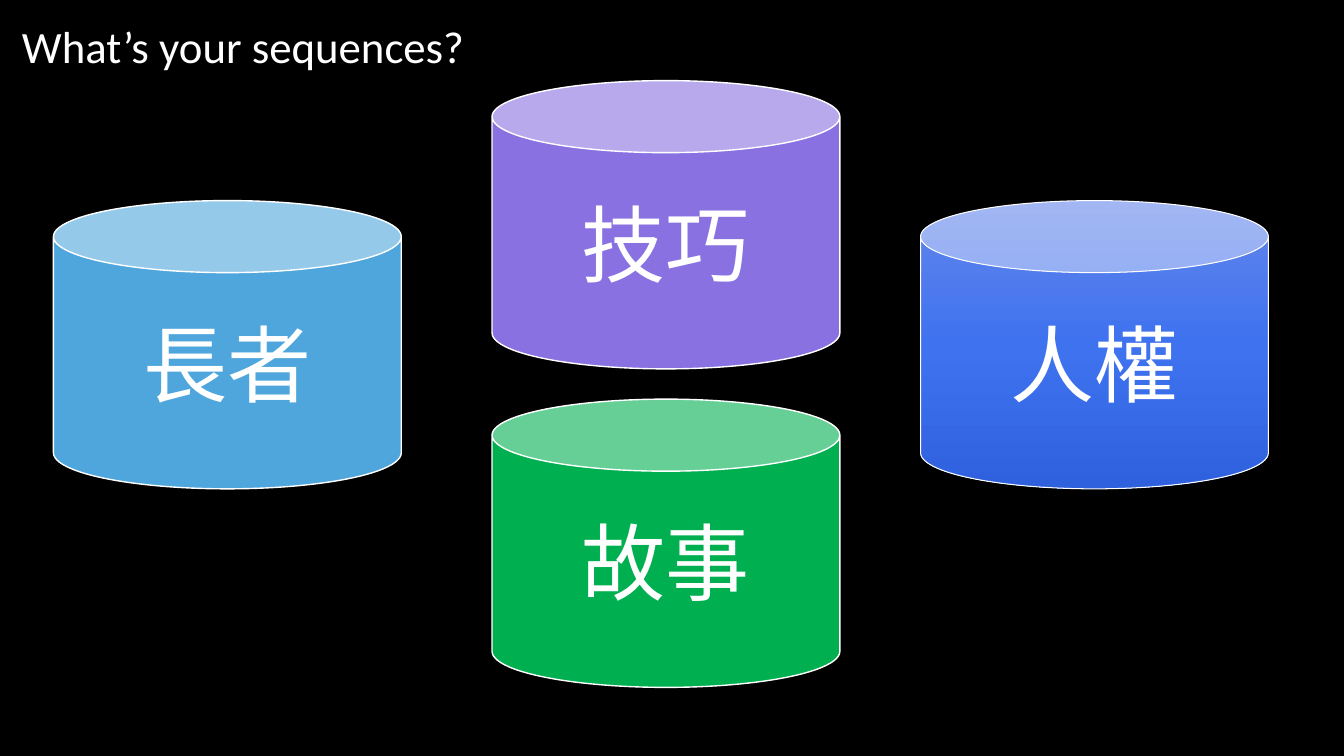
from copy import deepcopy
from dataclasses import dataclass

from pptx import Presentation
from pptx.dml.color import RGBColor
from pptx.enum.shapes import MSO_SHAPE
from pptx.enum.text import MSO_ANCHOR, MSO_AUTO_SIZE, PP_ALIGN
from pptx.oxml.ns import qn
from pptx.shapes.autoshape import Shape
from pptx.slide import Slide
from pptx.util import Inches, Pt

CAN = MSO_SHAPE.CAN
MIDDLE = MSO_ANCHOR.MIDDLE
FIT_SHAPE = MSO_AUTO_SIZE.SHAPE_TO_FIT_TEXT
LEFT, CENTER = PP_ALIGN.LEFT, PP_ALIGN.CENTER

FONT = "Calibri"
BLACK, WHITE = "000000", "FFFFFF"
CAN_WIDTH, CAN_HEIGHT = 3.45, 2.86
CENTER_COLUMN, SIDE_ROW = 4.88, 1.99


@dataclass(frozen=True)
class Cylinder:
    label: str
    left: float
    top: float
    colors: tuple[str, ...]  # one colour is solid, three run from top to bottom
    line_width: float = 1


CYLINDERS = [
    Cylinder("技巧", CENTER_COLUMN, 0.8, ("8971E1",)),
    Cylinder("長者", 0.53, SIDE_ROW, ("4EA6DC",)),
    Cylinder("故事", CENTER_COLUMN, 3.96, ("00B050",)),
    Cylinder("人權", 9.13, SIDE_ROW, ("6386EB", "3F72EF", "2F61DE"), 0.75),
]


def rgb(color: str) -> RGBColor:
    return RGBColor.from_string(color)


def write_text(shape: Shape, text: str, *, size: float, color: str = WHITE,
               align: PP_ALIGN = LEFT) -> None:
    paragraph = shape.text_frame.paragraphs[0]
    paragraph.alignment = align
    run = paragraph.add_run()
    run.text = text
    run.font.name = FONT
    run.font.size = Pt(size)
    run.font.color.rgb = rgb(color)


def fill_gradient(shape: Shape, colors: tuple[str, ...]) -> None:
    shape.fill.gradient()
    shape.fill.gradient_angle = 270
    # The default gradient has two stops; add the missing ones
    stop_list = shape.fill._xPr.find(qn("a:gradFill")).find(qn("a:gsLst"))
    while len(stop_list) < len(colors):
        stop_list.append(deepcopy(stop_list[0]))
    for index, (stop, color) in enumerate(zip(shape.fill.gradient_stops, colors)):
        stop.position = index / (len(colors) - 1)
        stop.color.rgb = rgb(color)


def add_cylinder(slide: Slide, cylinder: Cylinder) -> None:
    shape = slide.shapes.add_shape(
        CAN, Inches(cylinder.left), Inches(cylinder.top),
        Inches(CAN_WIDTH), Inches(CAN_HEIGHT))
    shape.shadow.inherit = False
    if len(cylinder.colors) > 1:
        fill_gradient(shape, cylinder.colors)
    else:
        shape.fill.solid()
        shape.fill.fore_color.rgb = rgb(cylinder.colors[0])
    shape.line.color.rgb = rgb(WHITE)
    shape.line.width = Pt(cylinder.line_width)
    shape.text_frame.vertical_anchor = MIDDLE
    write_text(shape, cylinder.label, size=60, align=CENTER)


def add_title(slide: Slide) -> None:
    title = slide.shapes.add_textbox(
        Inches(0.12), Inches(0.14), Inches(4.94), Inches(0.64))
    title.text_frame.word_wrap = False
    title.text_frame.auto_size = FIT_SHAPE
    write_text(title, "What’s your sequences?", size=32)


def main() -> None:
    presentation = Presentation()
    presentation.slide_width = Inches(13.33)
    presentation.slide_height = Inches(7.5)
    slide = presentation.slides.add_slide(presentation.slide_layouts[6])

    # Background
    slide.background.fill.solid()
    slide.background.fill.fore_color.rgb = rgb(BLACK)

    # Cylinders and title
    for cylinder in CYLINDERS:
        add_cylinder(slide, cylinder)
    add_title(slide)

    presentation.save("out.pptx")


if __name__ == "__main__":
    main()
